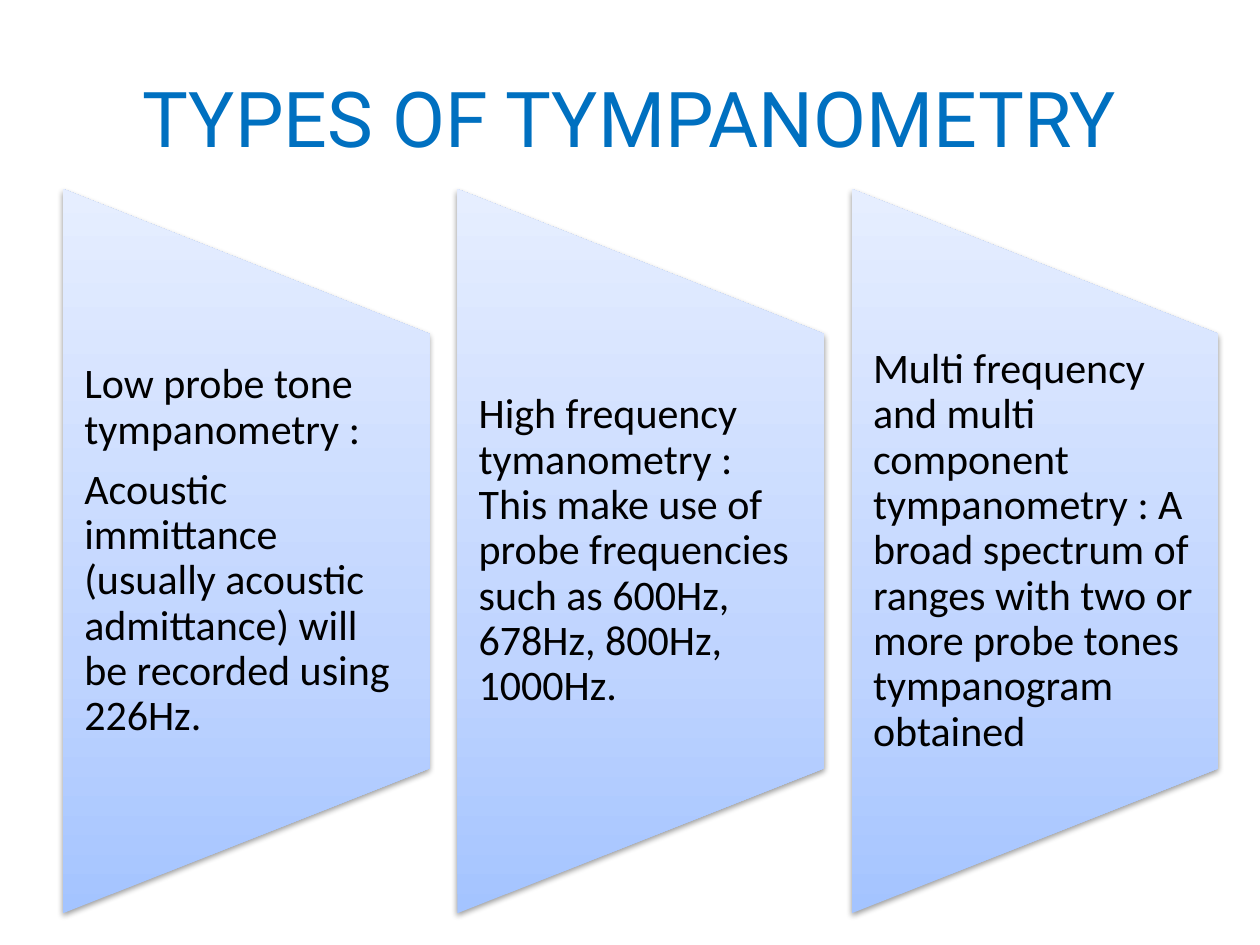
from lxml import etree
from pptx import Presentation
from pptx.dml.color import RGBColor
from pptx.enum.shapes import MSO_SHAPE
from pptx.enum.text import MSO_ANCHOR, PP_ALIGN
from pptx.oxml import parse_xml
from pptx.oxml.ns import nsdecls, qn
from pptx.util import Cm, Pt

TRAPEZOID = MSO_SHAPE.FLOWCHART_MANUAL_OPERATION
MIDDLE = MSO_ANCHOR.MIDDLE
CENTER, LEFT = PP_ALIGN.CENTER, PP_ALIGN.LEFT

TITLE = "TYPES OF TYMPANOMETRY"
TYPES = [
    ["Low probe tone tympanometry :",
     "Acoustic immittance (usually acoustic admittance) will be recorded using 226Hz."],
    ["High frequency tymanometry : This make use of probe frequencies "
     "such as 600Hz, 678Hz, 800Hz, 1000Hz."],
    ["Multi frequency and multi component tympanometry : A broad spectrum of ranges "
     "with two or more probe tones tympanogram obtained"],
]
GRADIENT = [(0, "A4C4FF"), (35, "BFD4FF"), (100, "E6EEFF")]
PANEL_LEFT, PANEL_PITCH = 1.27, 7.95
PANEL_WIDTH, PANEL_HEIGHT = 7.39, 14.6
PANEL_MIDDLE, TEXT_HEIGHT = 11.11, 8.76


def rgb(value):
    """Turn a hex string into a colour."""
    return RGBColor.from_string(value)


def style_font(font, name, size, color):
    """Set the face, size and colour of a font."""
    font.name = name
    font.size = Pt(size)
    font.color.rgb = rgb(color)


def add_title(slide):
    """Fill and format the title placeholder."""
    title = slide.shapes.title
    title.left, title.top, title.width, title.height = Cm(1.27), Cm(0.76), Cm(22.86), Cm(3.18)
    frame = title.text_frame
    frame.text = TITLE
    frame.vertical_anchor = MIDDLE
    frame.paragraphs[0].alignment = CENTER
    style_font(frame.paragraphs[0].runs[0].font, "Roboto", 44, "0070C0")


def apply_gradient(shape):
    """Give a shape an upright gradient that ignores its rotation."""
    stops = "".join(
        f'<a:gs pos="{position * 1000}"><a:srgbClr val="{color}"/></a:gs>'
        for position, color in GRADIENT)
    gradient = parse_xml(
        f'<a:gradFill {nsdecls("a")} rotWithShape="0"><a:gsLst>{stops}</a:gsLst>'
        '<a:lin ang="16200000" scaled="0"/></a:gradFill>')
    shape._element.spPr.find(qn("a:prstGeom")).addnext(gradient)


def apply_shadow(shape):
    """Give a shape a soft shadow below it."""
    shape.shadow.inherit = False
    effects = shape._element.spPr.find(qn("a:effectLst"))
    shadow = etree.SubElement(
        effects, qn("a:outerShdw"), blurRad=str(Pt(3.1)), dist=str(Pt(1.6)),
        dir="5400000", rotWithShape="0")
    color = etree.SubElement(shadow, qn("a:srgbClr"), val="000000")
    etree.SubElement(color, qn("a:alpha"), val="38000")


def add_panel(shapes, left):
    """Draw a trapezoid turned so that its long side is on the left."""
    center = left + PANEL_WIDTH / 2
    panel = shapes.add_shape(
        TRAPEZOID, Cm(center - PANEL_HEIGHT / 2), Cm(PANEL_MIDDLE - PANEL_WIDTH / 2),
        Cm(PANEL_HEIGHT), Cm(PANEL_WIDTH))
    panel.rotation = 270
    panel.line.fill.background()
    apply_gradient(panel)
    apply_shadow(panel)


def add_description(shapes, left, paragraphs):
    """Write the description of one type over its panel."""
    description = shapes.add_textbox(
        Cm(left), Cm(PANEL_MIDDLE - TEXT_HEIGHT / 2), Cm(PANEL_WIDTH), Cm(TEXT_HEIGHT))
    frame = description.text_frame
    frame.word_wrap = True
    frame.vertical_anchor = MIDDLE
    frame.margin_left = frame.margin_right = Cm(0.43)
    frame.margin_top = frame.margin_bottom = 0
    frame.text = "\n".join(paragraphs)
    for paragraph in frame.paragraphs:
        paragraph.alignment = LEFT
        paragraph.line_spacing = 0.9
        paragraph.space_after = Pt(8.4)
        style_font(paragraph.runs[0].font, "Calibri", 24, "000000")


def main():
    """Build and save the slide."""
    presentation = Presentation()
    presentation.slide_width, presentation.slide_height = Cm(25.4), Cm(19.05)
    slide = presentation.slides.add_slide(presentation.slide_layouts[5])
    add_title(slide)
    types_group = slide.shapes.add_group_shape()
    for index, paragraphs in enumerate(TYPES):
        left = PANEL_LEFT + index * PANEL_PITCH
        add_panel(types_group.shapes, left)
        add_description(types_group.shapes, left, paragraphs)
    presentation.save("out.pptx")


if __name__ == "__main__":
    main()
